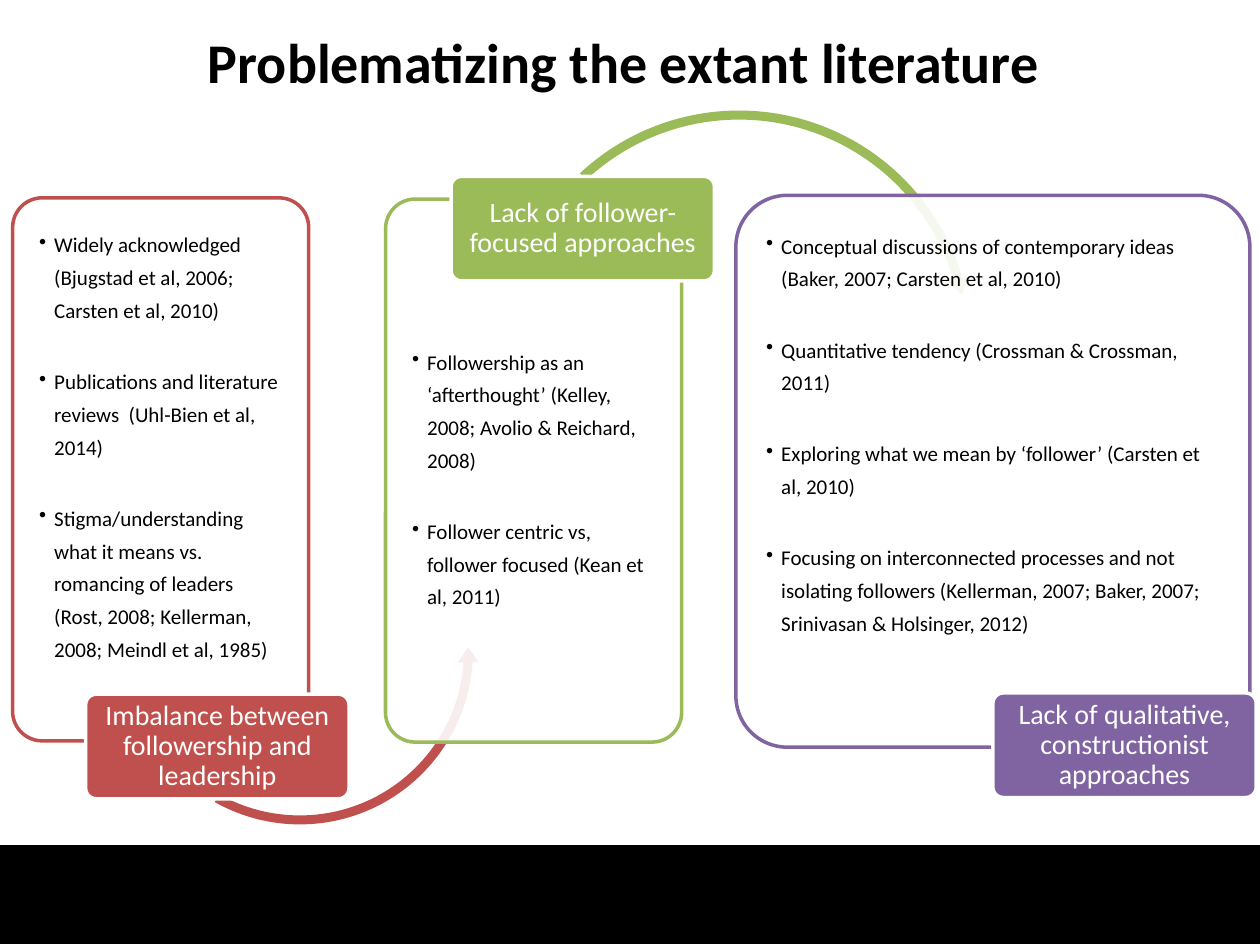
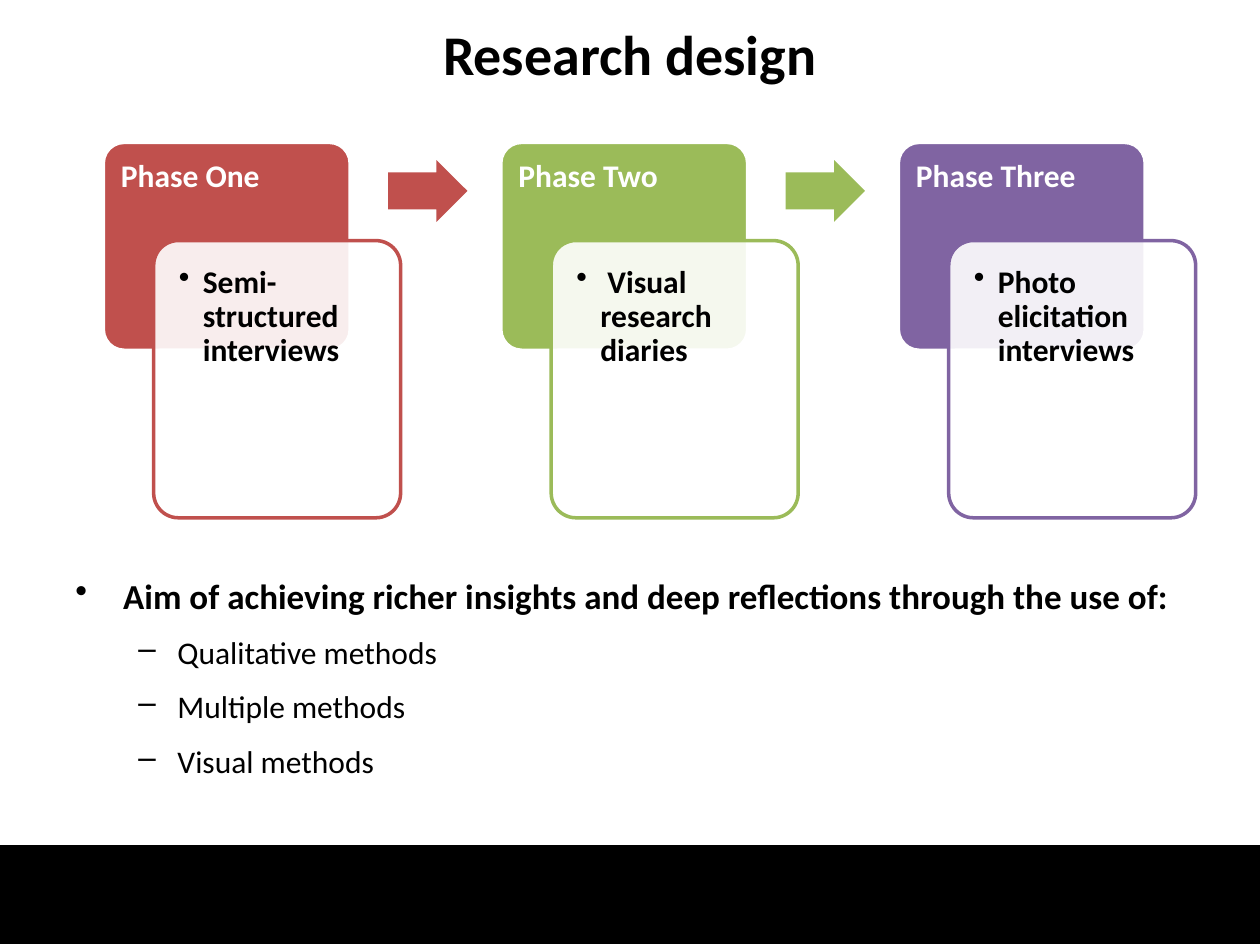
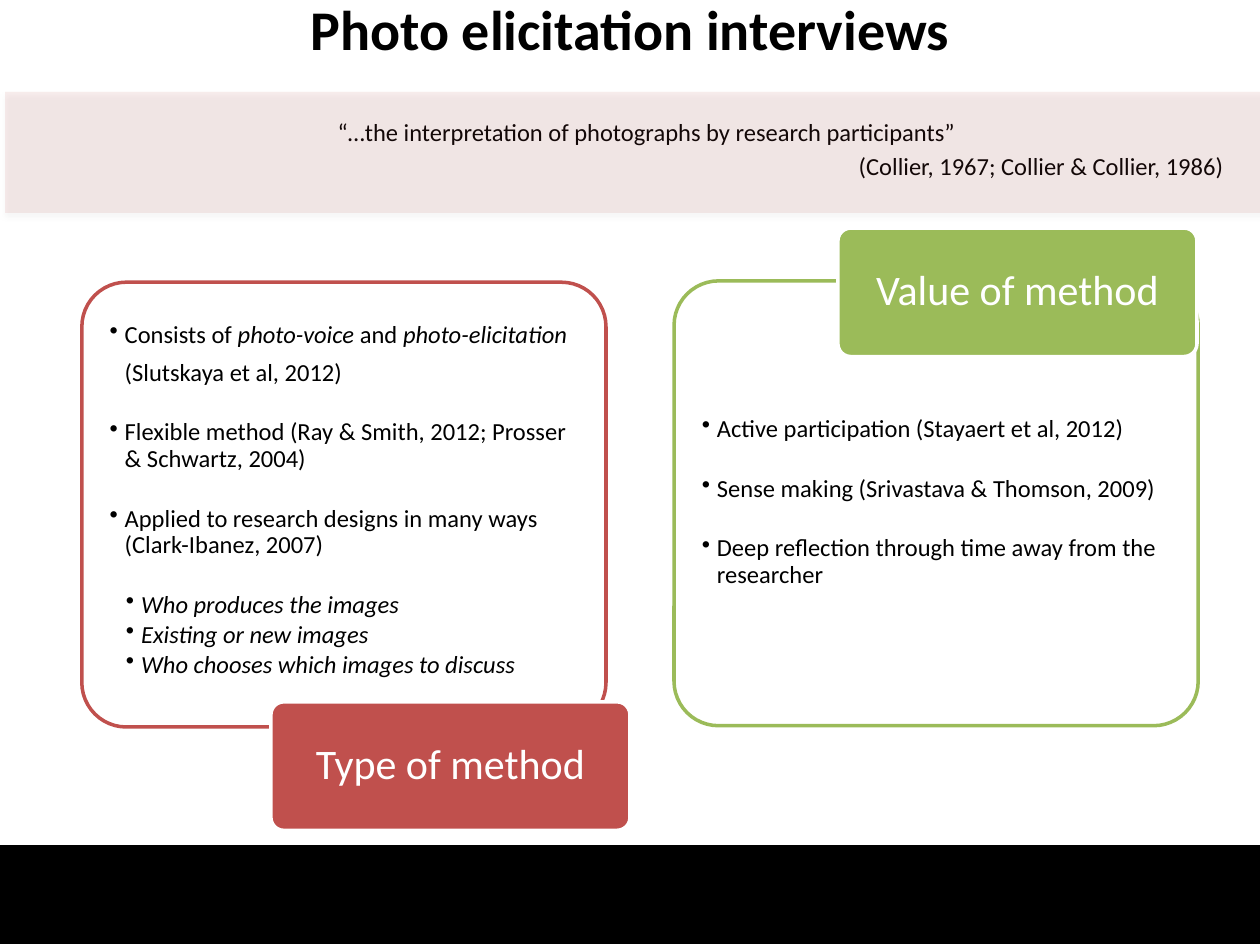
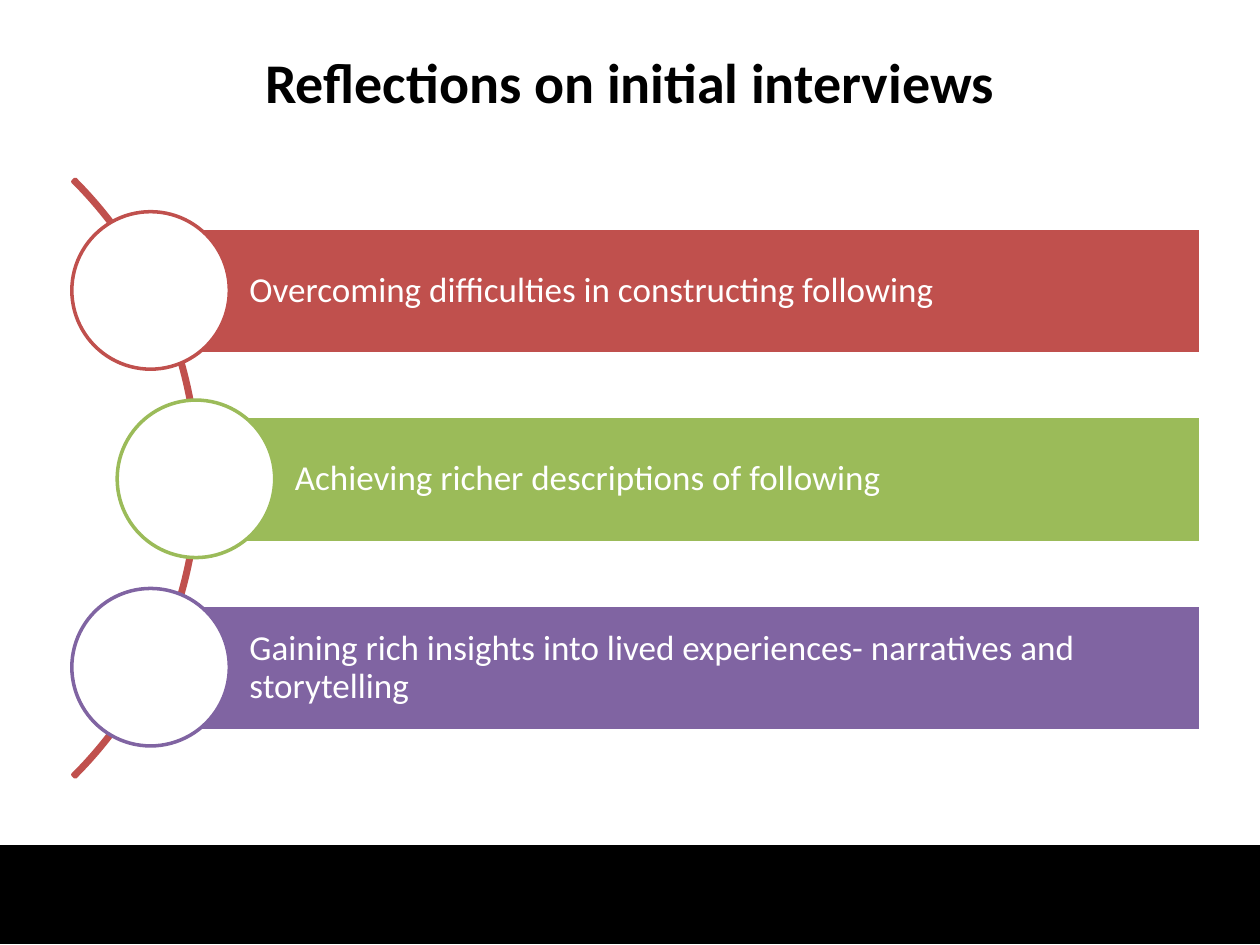
import pptx
import pptx.dml.color
import pptx.enum.shapes
import pptx.enum.text
import pptx.oxml.ns
import pptx.util
from lxml import etree

Inches = pptx.util.Inches
Pt = pptx.util.Pt
RGBColor = pptx.dml.color.RGBColor
SHAPE = pptx.enum.shapes.MSO_SHAPE
ALIGN = pptx.enum.text.PP_ALIGN
ANCHOR = pptx.enum.text.MSO_ANCHOR
qn = pptx.oxml.ns.qn

BLACK = RGBColor(0x00, 0x00, 0x00)
WHITE = RGBColor(0xFF, 0xFF, 0xFF)
RED = RGBColor(0xC0, 0x50, 0x4D)
GREEN = RGBColor(0x9B, 0xBB, 0x59)
PURPLE = RGBColor(0x80, 0x64, 0xA2)
ACCENTS = (RED, GREEN, PURPLE)
FONT = "Calibri"
TITLE_ONLY = 5


def inches(box):
    return [Inches(length) for length in box]


def inset(box, pad):
    left, top, width, height = box
    return left + pad, top + pad, width - 2 * pad, height - 2 * pad


def write(frame, text, size=12, color=BLACK, bold=False, italic=False,
          align=None, spacing=None, before=0, bullet=None, indent=0.12,
          hang=0.12, level=0):
    """Add one paragraph; parts of the text between asterisks turn italic."""
    paragraph = frame.paragraphs[0]
    if paragraph.runs:
        paragraph = frame.add_paragraph()
        paragraph.space_before = Pt(before)
    paragraph.alignment = align
    paragraph.line_spacing = spacing
    paragraph.level = level
    if bullet:
        properties = paragraph._p.get_or_add_pPr()
        properties.set("marL", str(Inches(indent)))
        properties.set("indent", str(-Inches(hang)))
        etree.SubElement(properties, qn("a:buChar"), char=bullet)
    for index, part in enumerate(text.split("*")):
        run = paragraph.add_run()
        run.text = part
        run.font.name = FONT
        run.font.size = Pt(size)
        run.font.color.rgb = color
        run.font.bold = bold
        run.font.italic = italic or index % 2 == 1


class Deck:
    def __init__(self):
        self.prs = pptx.Presentation()
        self.prs.slide_width = Inches(10)
        self.prs.slide_height = Inches(7.5)
        self.slide = None

    def start_slide(self, title, top, height):
        layout = self.prs.slide_layouts[TITLE_ONLY]
        self.slide = self.prs.slides.add_slide(layout)
        heading = self.slide.shapes.title
        heading.left, heading.top, heading.width, heading.height = inches(
            (0.5, top, 9, height))
        heading.text_frame.vertical_anchor = ANCHOR.MIDDLE
        write(heading.text_frame, title, size=32, bold=True, align=ALIGN.CENTER)

    def put_footer_on_master(self):
        """Draw the footer band and move it behind everything on the master."""
        band = self.shape(SHAPE.RECTANGLE, (-0.04, 6.72, 10.04, 0.76),
                          fill=BLACK, line=BLACK)
        self.prs.slide_master.shapes._spTree.insert(2, band._element)

    def shape(self, kind, box, fill=None, line=None, opacity=None, adjust=()):
        shape = self.slide.shapes.add_shape(kind, *inches(box))
        shape.shadow.inherit = False
        for index, value in enumerate(adjust):
            shape.adjustments[index] = value
        if fill is None:
            shape.fill.background()
        else:
            shape.fill.solid()
            shape.fill.fore_color.rgb = fill
        if opacity is not None:
            color = shape._element.spPr.find(qn("a:solidFill"))[0]
            etree.SubElement(color, qn("a:alpha"), val=str(opacity * 1000))
        if line is None:
            shape.line.fill.background()
        else:
            shape.line.color.rgb = line
            shape.line.width = Pt(2)
        return shape

    def rounded(self, box, **style):
        return self.shape(SHAPE.ROUNDED_RECTANGLE, box, adjust=(0.1,), **style)

    def text_box(self, box, margins=(0.1, 0.05, 0.1, 0.05), anchor=ANCHOR.TOP):
        frame = self.slide.shapes.add_textbox(*inches(box)).text_frame
        frame.word_wrap = True
        frame.vertical_anchor = anchor
        (frame.margin_left, frame.margin_top,
         frame.margin_right, frame.margin_bottom) = inches(margins)
        return frame

    def panel(self, box, color, pad, tag_room=0, tag_on_top=False):
        """Outlined panel whose text keeps clear of the tag over its edge."""
        self.rounded(box, fill=WHITE, line=color, opacity=90)
        left, top, width, height = inset(box, pad)
        if tag_on_top:
            top += tag_room
        return self.text_box((left, top, width, height - tag_room), (0.14,) * 4)

    def tag(self, box, color, text, size, pad):
        self.rounded(box, fill=color, line=WHITE)
        margins = (2 * pad - 0.01, pad, 2 * pad - 0.01, pad)
        frame = self.text_box(inset(box, pad), margins, ANCHOR.MIDDLE)
        write(frame, text, size=size, color=WHITE, align=ALIGN.CENTER, spacing=0.9)

    def soft_shadow(self, shape):
        effects = shape._element.spPr.find(qn("a:effectLst"))
        shadow = etree.SubElement(
            effects, qn("a:outerShdw"), blurRad=str(Pt(3.1)), dist=str(Pt(1.8)),
            dir=str(90 * 60000), rotWithShape="0")
        color = etree.SubElement(shadow, qn("a:srgbClr"), val=str(BLACK))
        etree.SubElement(color, qn("a:alpha"), val="35000")


def literature_slide(deck):
    deck.start_slide("Problematizing the extant literature ", 0.02, 0.93)
    deck.put_footer_on_master()

    def gap(box, color, points, pad, tag_text, tag_at, tag_on_top=False, arrow=None):
        frame = deck.panel(box, color, pad, 0.92, tag_on_top)
        for point in points:
            write(frame, point, spacing=1.3, before=22, bullet="•")
        if arrow:
            kind, arrow_box, adjust = arrow
            deck.shape(kind, arrow_box, fill=color, adjust=adjust)
        deck.tag((*tag_at, 2.09, 0.83), color, tag_text, 16, 0.02)

    gap((0.1, 1.57, 2.35, 4.31), RED, (
        "Widely acknowledged (Bjugstad et al, 2006; Carsten et al, 2010)",
        "Publications and literature reviews  (Uhl-Bien et al, 2014)",
        "Stigma/understanding what it means vs. romancing of leaders "
        "(Rost, 2008; Kellerman, 2008; Meindl et al, 1985)",
    ), 0.07, "Imbalance between followership and leadership", (0.68, 5.51),
        arrow=(SHAPE.LEFT_CIRCULAR_ARROW, (0.96, 3.75, 2.84, 2.84),
               (0.025, 3.04, 2.21, 71.66, 0.029)))
    gap((3.06, 1.58, 2.35, 4.31), GREEN, (
        "Followership as an ‘afterthought’ (Kelley, 2008; Avolio & Reichard, 2008)",
        "Follower centric vs, follower focused (Kean et al, 2011)",
    ), 0.07, "Lack of follower-focused approaches", (3.58, 1.4), tag_on_top=True,
        arrow=(SHAPE.CIRCULAR_ARROW, (3.97, 0.83, 3.79, 3.79),
               (0.019, 2.24, 206.38, 136.14, 0.022)))
    gap((5.84, 1.55, 4.08, 4.38), PURPLE, (
        "Conceptual discussions of contemporary ideas "
        "(Baker, 2007; Carsten et al, 2010)",
        "Quantitative tendency (Crossman & Crossman, 2011)",
        "Exploring what we mean by ‘follower’ (Carsten et al, 2010)",
        "Focusing on interconnected processes and not isolating followers "
        "(Kellerman, 2007; Baker, 2007; Srinivasan & Holsinger, 2012)",
    ), 0.1, "Lack of qualitative, constructionist approaches", (7.88, 5.5))


def design_slide(deck):
    deck.start_slide("Research design", 0.02, 0.81)
    phases = (("Phase One", "Semi-structured interviews"),
              ("Phase Two", " Visual research diaries"),
              ("Phase Three", "Photo elicitation interviews"))
    for index, ((phase, method), color) in enumerate(zip(phases, ACCENTS)):
        left, top = 0.82 + 3.155 * index, 1.13
        deck.rounded((left, top, 1.96, 1.65), fill=color, line=WHITE)
        heading = deck.text_box((left, top, 1.96, 0.79), (0.14, 0.14, 0.14, 0.07))
        write(heading, phase, size=18, color=WHITE, bold=True, spacing=0.9)
        frame = deck.panel((left + 0.4, top + 0.78, 1.96, 2.2), color, 0.06)
        write(frame, method, size=18, bold=True, spacing=0.9, bullet="•",
              indent=0.19, hang=0.19)
        if index < len(phases) - 1:
            deck.shape(SHAPE.RIGHT_ARROW, (left + 2.26, top + 0.14, 0.63, 0.49),
                       fill=color, adjust=(0.6, 0.5))

    aims = deck.text_box((0.5, 4.51, 9, 2.19))
    write(aims, "Aim of achieving richer insights and deep reflections "
          "through the use of:", size=20, bold=True, bullet="•",
          indent=0.38, hang=0.38)
    for method in ("Qualitative methods", "Multiple methods", "Visual methods"):
        write(aims, method, size=18, spacing=1.3, before=3, bullet="–",
              indent=0.81, hang=0.31, level=1)


def elicitation_slide(deck):
    deck.start_slide("Photo elicitation interviews", -0.19, 0.83)
    quote = deck.text_box((0.5, 0.6, 9.31, 1.09), (0.1, 0.33, 0.1, 0.05))
    write(quote, "“…the interpretation of photographs by research participants” ",
          size=14, align=ALIGN.CENTER)
    write(quote, "(Collier, 1967; Collier & Collier, 1986)", size=14,
          align=ALIGN.RIGHT, before=2.5)
    band = deck.shape(SHAPE.RECTANGLE, (0.04, 0.73, 10, 0.96), fill=RED, opacity=10)
    deck.soft_shadow(band)

    def points(frame, first, *others):
        write(frame, first, size=14, spacing=1.3, bullet="•")
        for point in others:
            write(frame, point, size=14, spacing=0.9, before=19, bullet="•")

    types = deck.panel((0.65, 2.24, 4.16, 3.53), RED, 0.08, 0.76)
    points(types,
           "Consists of *photo-voice *and *photo-elicitation *(Slutskaya et al, 2012)",
           "Flexible method (Ray & Smith, 2012; Prosser & Schwartz, 2004)",
           "Applied to research designs in many ways (Clark-Ibanez, 2007)")
    questions = ("Who produces the images", "Existing or new images",
                 "Who chooses which images to discuss")
    for index, question in enumerate(questions):
        write(types, question, size=14, italic=True, spacing=0.9,
              before=2 if index else 19, bullet="•", indent=0.25, level=1)
    deck.tag((2.15, 5.57, 2.85, 1.02), RED, "Type of method", 24, 0.03)

    values = deck.panel((5.35, 2.23, 4.16, 3.53), GREEN, 0.08, 0.76, tag_on_top=True)
    points(values,
           "Active participation (Stayaert et al, 2012)",
           "Sense making (Srivastava & Thomson, 2009)",
           "Deep reflection through time away from the researcher")
    deck.tag((6.65, 1.81, 2.85, 1.02), GREEN, "Value of method", 24, 0.03)


def reflections_slide(deck):
    deck.start_slide("Reflections on initial interviews", 0.02, 1.25)
    deck.shape(SHAPE.BLOCK_ARC, (-5.13, 0.44, 6.71, 6.71), line=RED,
               adjust=(189, 27, 0.004))
    reflections = (
        (1.19, "Overcoming difficulties in constructing following"),
        (1.55, "Achieving richer descriptions of following"),
        (1.19, "Gaining rich insights into lived experiences- narratives "
               "and storytelling"))
    right = 9.53
    for index, ((left, reflection), color) in enumerate(zip(reflections, ACCENTS)):
        top = 1.81 + 1.495 * index
        bar = (left, top, right - left, 1)
        deck.shape(SHAPE.RECTANGLE, bar, fill=color, line=WHITE)
        frame = deck.text_box(bar, (0.79, 0.06, 0.06, 0.06), ANCHOR.MIDDLE)
        write(frame, reflection, size=20, color=WHITE, spacing=0.9)
        deck.shape(SHAPE.OVAL, (left - 0.62, top - 0.13, 1.25, 1.25),
                   fill=WHITE, line=color)


def main():
    deck = Deck()
    literature_slide(deck)
    design_slide(deck)
    elicitation_slide(deck)
    reflections_slide(deck)
    deck.prs.save("out.pptx")


if __name__ == "__main__":
    main()
